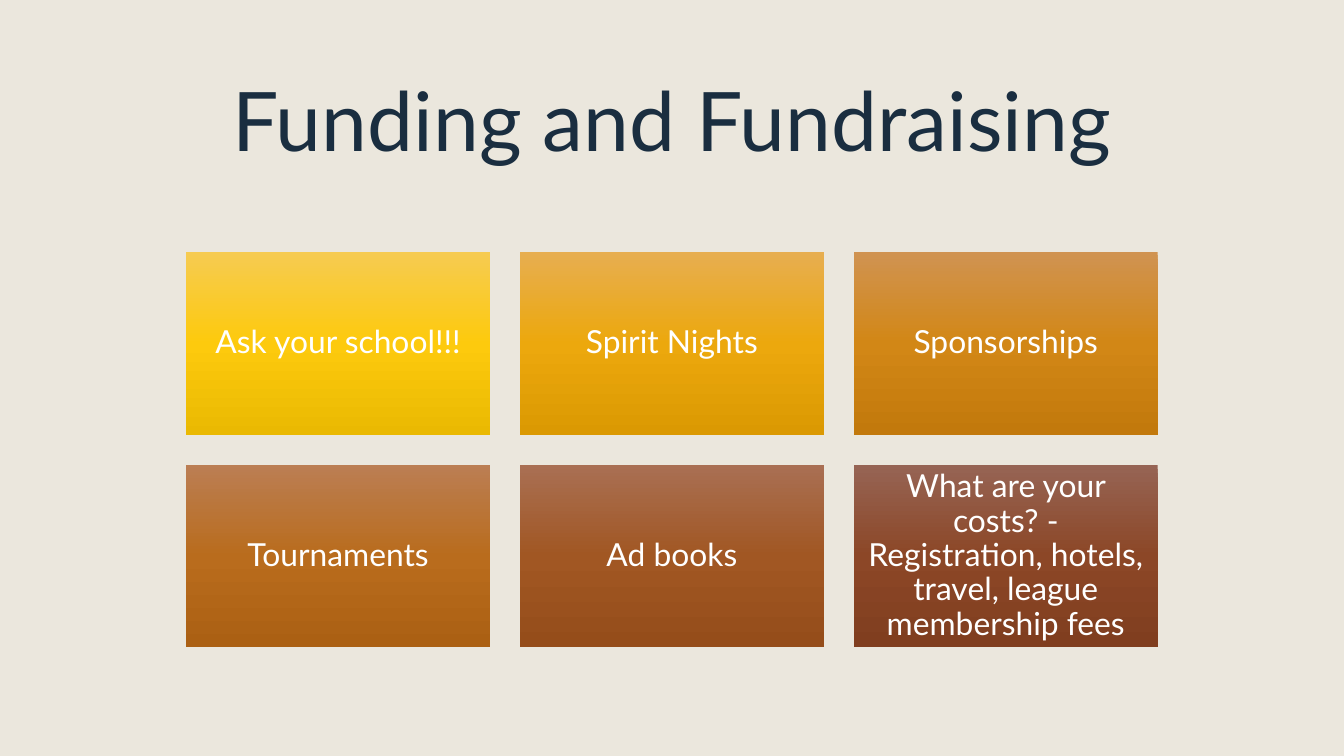
from copy import deepcopy
from dataclasses import dataclass

from pptx import Presentation
from pptx.dml.color import RGBColor
from pptx.enum.shapes import MSO_SHAPE
from pptx.enum.text import MSO_ANCHOR, PP_ALIGN
from pptx.util import Cm, Pt


@dataclass(frozen=True)
class Theme:
    """Colours, font and type sizes of the slide."""
    font: str = "Lato"
    background: str = "EBE7DD"
    heading: str = "1A2E40"
    card_text: str = "FFFFFF"
    heading_size: int = 44
    card_size: int = 17


THEME = Theme()
COLUMNS = 3
IDEAS = [
    ("Ask your school!!!", ("F6CB51", "FDCA0D", "EAB902")),
    ("Spirit Nights", ("E7AE50", "ECA80D", "DB9902")),
    ("Sponsorships", ("D09351", "D28716", "C2790C")),
    ("Tournaments", ("BB7E53", "B96C1D", "AB6013")),
    ("Ad books", ("A96F53", "A15723", "954D1A")),
    ("What are your costs? - Registration, hotels, travel, league membership fees",
     ("966454", "8C4727", "803E1F")),
]


def write_text(frame, text, *, size, color, spacing=0.9, anchor=MSO_ANCHOR.MIDDLE):
    """Fill a text frame with one centred, wrapped paragraph."""
    frame.word_wrap = True
    frame.vertical_anchor = anchor
    paragraph = frame.paragraphs[0]
    paragraph.alignment = PP_ALIGN.CENTER
    paragraph.line_spacing = spacing
    run = paragraph.add_run()
    run.text = text
    run.font.name = THEME.font
    run.font.size = Pt(size)
    run.font.color.rgb = RGBColor.from_string(color)


def apply_gradient(shape, colors):
    """Shade a shape from top to bottom with evenly spaced colours."""
    shape.fill.gradient()
    shape.fill.gradient_angle = 270
    stop_list = shape.fill.gradient_stops[0]._gs.getparent()
    stop_list.insert(1, deepcopy(stop_list[0]))
    for index, (stop, color) in enumerate(zip(shape.fill.gradient_stops, colors)):
        stop.color.rgb = RGBColor.from_string(color)
        stop.position = index / (len(colors) - 1)


def add_heading(slide, text):
    """Add the slide heading."""
    heading = slide.shapes.add_textbox(Cm(1.35), Cm(1.42), Cm(22.71), Cm(3.1))
    write_text(heading.text_frame, text, size=THEME.heading_size,
               color=THEME.heading, spacing=0.89, anchor=MSO_ANCHOR.TOP)


def add_card(slide, left, top, text, colors):
    """Add one gradient card with its idea."""
    card = slide.shapes.add_shape(MSO_SHAPE.RECTANGLE, left, top, Cm(5.74), Cm(3.45))
    card.shadow.inherit = False
    card.line.fill.background()
    apply_gradient(card, colors)
    frame = card.text_frame
    frame.margin_left = frame.margin_right = Cm(0.18)
    frame.margin_top = frame.margin_bottom = Cm(0.18)
    write_text(frame, text, size=THEME.card_size, color=THEME.card_text)


def main():
    """Build and save the fundraising slide."""
    deck = Presentation()
    deck.slide_width, deck.slide_height = Cm(25.4), Cm(14.29)
    slide = deck.slides.add_slide(deck.slide_layouts[6])
    slide.background.fill.solid()
    slide.background.fill.fore_color.rgb = RGBColor.from_string(THEME.background)
    add_heading(slide, "Funding and Fundraising")
    for index, (idea, colors) in enumerate(IDEAS):
        row, column = divmod(index, COLUMNS)
        add_card(slide, Cm(3.52 + column * 6.31), Cm(4.77 + row * 4.02), idea, colors)
    deck.save("out.pptx")


if __name__ == "__main__":
    main()
